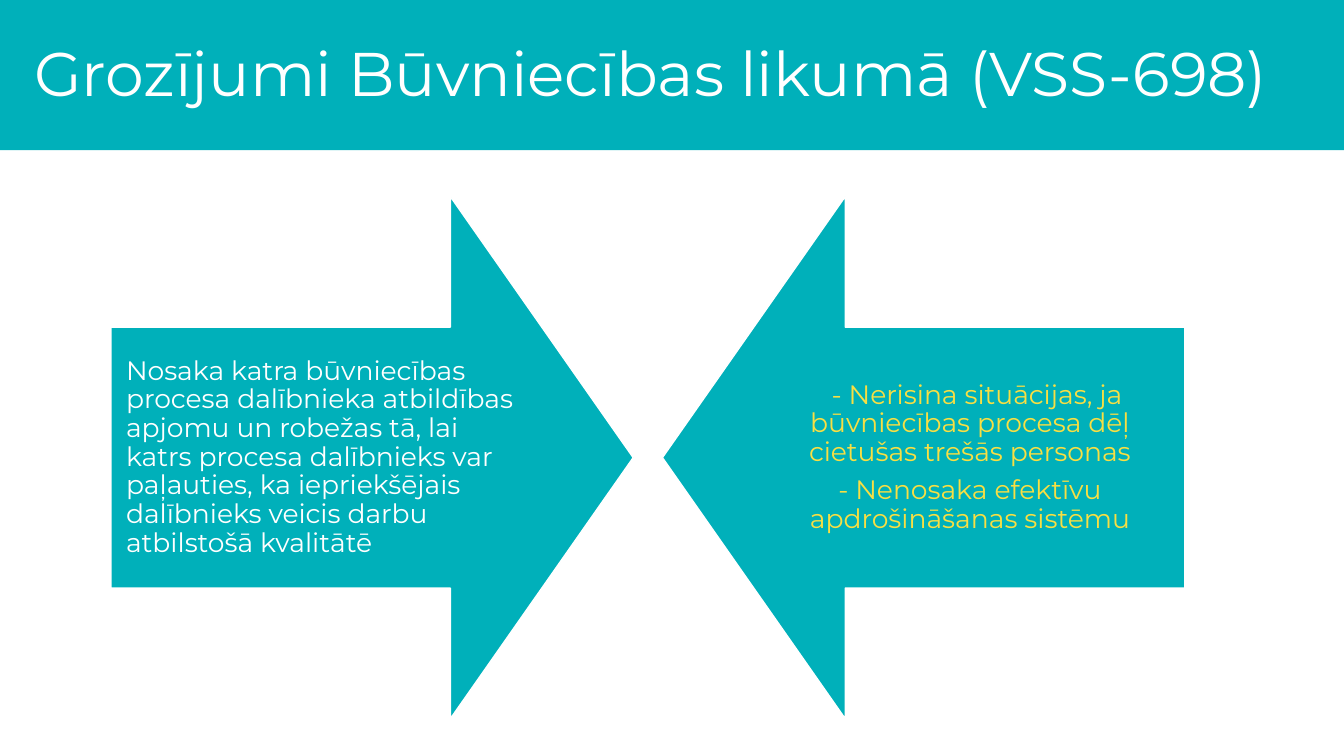
from dataclasses import dataclass

from pptx import Presentation
from pptx import util as u
from pptx.dml.color import RGBColor
from pptx.enum import shapes, text
from pptx.util import Inches


@dataclass(frozen=True)
class Theme:
    font: str = "Montserrat"
    teal: RGBColor = RGBColor(0x00, 0xB0, 0xBA)
    white: RGBColor = RGBColor(0xFF, 0xFF, 0xFF)
    yellow: RGBColor = RGBColor(0xF8, 0xDF, 0x43)
    title_size: float = 44
    body_size: float = 19
    paragraph_gap: float = 6.65


THEME = Theme()
ARROW_SIZE = 5.18
ARROW_TOP = 1.95
LABEL_WIDTH, LABEL_HEIGHT = 4.28, 2.59
LABEL_TOP = ARROW_TOP + (ARROW_SIZE - LABEL_HEIGHT) / 2


def add_filled_shape(slide, kind, left, top, width, height):
    shape = slide.shapes.add_shape(
        kind, Inches(left), Inches(top), Inches(width), Inches(height))
    shape.shadow.inherit = False
    shape.fill.solid()
    shape.fill.fore_color.rgb = THEME.teal
    shape.line.fill.background()
    return shape


def add_arrow(slide, left, rotation):
    arrow = add_filled_shape(slide, shapes.MSO_SHAPE.DOWN_ARROW,
                             left, ARROW_TOP, ARROW_SIZE, ARROW_SIZE)
    arrow.rotation = rotation
    arrow.adjustments[0] = 0.5
    arrow.adjustments[1] = 0.35
    arrow.line.color.rgb = THEME.white
    arrow.line.width = u.Pt(1)


def add_text(slide, left, top, width, height, lines, size, color,
             align=text.PP_ALIGN.LEFT, inset=None, first_indent=0):
    box = slide.shapes.add_textbox(
        Inches(left), Inches(top), Inches(width), Inches(height))
    frame = box.text_frame
    frame.word_wrap = True
    frame.vertical_anchor = text.MSO_ANCHOR.MIDDLE
    if inset is not None:
        frame.margin_left = frame.margin_right = Inches(inset)
        frame.margin_top = frame.margin_bottom = Inches(inset)
    for index, line in enumerate(lines):
        paragraph = frame.add_paragraph() if index else frame.paragraphs[0]
        paragraph.alignment = align
        paragraph.line_spacing = 0.9
        if len(lines) > 1 or inset is not None:
            paragraph.space_after = u.Pt(THEME.paragraph_gap)
        if first_indent and index == 0:
            paragraph._p.get_or_add_pPr().set("indent", str(Inches(first_indent)))
        run = paragraph.add_run()
        run.text = line
        run.font.name = THEME.font
        run.font.size = u.Pt(size)
        run.font.color.rgb = color


def add_label(slide, left, lines, color, **options):
    add_text(slide, left, LABEL_TOP, LABEL_WIDTH, LABEL_HEIGHT, lines,
             THEME.body_size, color, inset=0.15, **options)


def main():
    presentation = Presentation()
    presentation.slide_width = Inches(13.33)
    presentation.slide_height = Inches(7.5)
    slide = presentation.slides.add_slide(presentation.slide_layouts[6])

    # Title band
    add_filled_shape(slide, shapes.MSO_SHAPE.RECTANGLE, 0, -0.02, 13.33, 1.51)
    add_text(slide, 0.24, 0.03, 12.53, 1.45,
             ["Grozījumi Būvniecības likumā (VSS-698)"],
             THEME.title_size, THEME.white)

    # Left arrow: what the law sets out
    add_arrow(slide, 1.1, 270)
    add_label(slide, 1.1, [
        "Nosaka katra būvniecības procesa dalībnieka atbildības apjomu un "
        "robežas tā, lai katrs procesa dalībnieks var paļauties, ka "
        "iepriekšējais dalībnieks veicis darbu atbilstošā kvalitātē",
    ], THEME.white)

    # Right arrow: what it leaves unsolved
    add_arrow(slide, 6.57, 90)
    add_label(slide, 7.48, [
        "- Nerisina situācijas, ja būvniecības procesa dēļ cietušas trešās personas",
        "- Nenosaka efektīvu apdrošināšanas sistēmu",
    ], THEME.yellow, align=text.PP_ALIGN.CENTER, first_indent=0.14)

    presentation.save("out.pptx")


if __name__ == "__main__":
    main()
